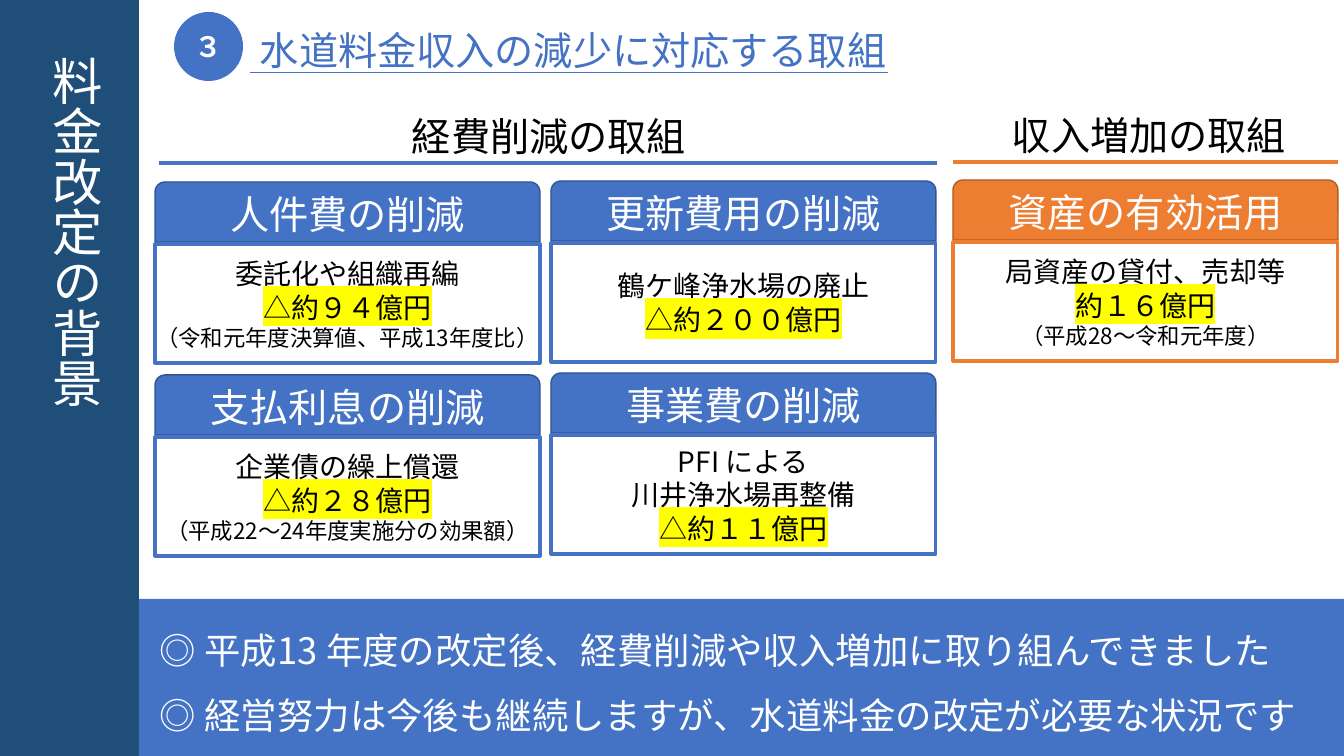
from pptx import Presentation
from pptx.dml.color import RGBColor
from pptx.enum import shapes, text
from pptx.oxml import ns
from pptx import util as u
from lxml import etree

NAVY = RGBColor(0x1F, 0x4E, 0x79)
BLUE = RGBColor(0x44, 0x72, 0xC4)
DARK_BLUE = RGBColor(0x32, 0x54, 0x91)
ORANGE = RGBColor(0xED, 0x7D, 0x31)
DARK_ORANGE = RGBColor(0xAF, 0x5C, 0x24)
WHITE = RGBColor(0xFF, 0xFF, 0xFF)
BLACK = RGBColor(0, 0, 0)
YELLOW = RGBColor(0xFF, 0xFF, 0x00)

PX = 914400 / 100.8
FONT = "Noto Sans CJK JP"
CENTER = text.PP_ALIGN.CENTER
MIDDLE = text.MSO_ANCHOR.MIDDLE
GROW = text.MSO_AUTO_SIZE.SHAPE_TO_FIT_TEXT
CARD_WIDTH, HEADER_HEIGHT, BODY_OFFSET, BODY_HEIGHT = 385, 60, 62, 119

CARDS = [
    (155, 182, BLUE, DARK_BLUE, "人件費の削減",
     ["委託化や組織再編"], "△約９４億円", "（令和元年度決算値、平成13年度比）"),
    (551, 181, BLUE, DARK_BLUE, "更新費用の削減",
     ["鶴ケ峰浄水場の廃止"], "△約２００億円", None),
    (155, 375, BLUE, DARK_BLUE, "支払利息の削減",
     ["企業債の繰上償還"], "△約２８億円", "（平成22～24年度実施分の効果額）"),
    (551, 373, BLUE, DARK_BLUE, "事業費の削減",
     ["PFI による", "川井浄水場再整備"], "△約１１億円", None),
    (953, 180, ORANGE, DARK_ORANGE, "資産の有効活用",
     ["局資産の貸付、売却等"], "約１６億円", "（平成28～令和元年度）"),
]
COLUMNS = [
    (383, 107, "経費削減の取組", 159, 937, 163, BLUE),
    (983, 106, "収入増加の取組", 953, 1338, 162, ORANGE),
]


def px(*lengths):
    """Turn whole pixels into EMU."""
    return [u.Emu(round(length * PX)) for length in lengths]


class Deck:
    """Holds the slide and draws styled elements on it."""

    def __init__(self):
        """Start a presentation with one blank slide."""
        self.presentation = Presentation()
        self.presentation.slide_width, self.presentation.slide_height = px(1344, 756)
        self.slide = self.presentation.slides.add_slide(self.presentation.slide_layouts[6])

    def shape(self, kind, box, fill, line=None, weight=1):
        """Add a filled preset shape."""
        shape = self.slide.shapes.add_shape(kind, *px(*box))
        shape.shadow.inherit = False
        shape.fill.solid()
        shape.fill.fore_color.rgb = fill
        if line is None:
            shape.line.fill.background()
        else:
            shape.line.color.rgb = line
            shape.line.width = u.Pt(weight)
        return shape

    def put_text(self, shape, lines, frame=None, paragraph=None):
        """Fill a shape with (text, size, colour, highlight, bold) lines."""
        text_frame = shape.text_frame
        for name, value in {"word_wrap": True, **(frame or {})}.items():
            setattr(text_frame, name, value)
        for index, line in enumerate(lines):
            item = text_frame.add_paragraph() if index else text_frame.paragraphs[0]
            for name, value in (paragraph or {}).items():
                setattr(item, name, value)
            self.run(item, *line)

    def run(self, paragraph, words, size, color, highlight=None, bold=False):
        """Add one styled run."""
        run = paragraph.add_run()
        run.text = words
        run.font.color.rgb = color
        properties = run._r.get_or_add_rPr()
        if highlight is not None:
            mark = etree.SubElement(properties, ns.qn("a:highlight"))
            etree.SubElement(mark, ns.qn("a:srgbClr")).set("val", str(highlight))
        for name, value in {"size": u.Pt(size), "bold": bold, "name": FONT}.items():
            setattr(run.font, name, value)
        etree.SubElement(properties, ns.qn("a:ea")).set("typeface", FONT)

    def textbox(self, box, lines, vertical=False, **paragraph):
        """Add a text box that grows with its text."""
        shape = self.slide.shapes.add_textbox(*px(*box))
        self.put_text(shape, lines, {"auto_size": GROW}, paragraph)
        if vertical:
            shape.element.txBody.find(ns.qn("a:bodyPr")).set("vert", "eaVert")

    def rule(self, left, right, top, color, weight):
        """Add a horizontal line."""
        line = self.slide.shapes.add_connector(
            shapes.MSO_CONNECTOR.STRAIGHT, *px(left, top, right, top))
        line.line.color.rgb = color
        line.line.width = u.Pt(weight)
        etree.SubElement(line.element.spPr, ns.qn("a:effectLst"))

    def card(self, left, top, color, edge, title, topics, amount, note):
        """Add a headed card with a highlighted amount."""
        margins = {"margin_left": 0, "margin_right": 0}
        centered = {"alignment": CENTER}
        header = self.shape(shapes.MSO_SHAPE.ROUND_2_SAME_RECTANGLE,
                            (left, top, CARD_WIDTH, HEADER_HEIGHT), color, edge)
        self.put_text(header, [(title, 28, WHITE)],
                      {**margins, "auto_size": GROW, "vertical_anchor": text.MSO_ANCHOR.TOP},
                      centered)
        body = self.shape(shapes.MSO_SHAPE.RECTANGLE,
                          (left, top + BODY_OFFSET, CARD_WIDTH, BODY_HEIGHT),
                          WHITE, color, 2.25)
        lines = [(topic, 20, BLACK) for topic in topics]
        lines.append((amount, 20, BLACK, YELLOW))
        if note:
            lines.append((note, 16, BLACK))
        self.put_text(body, lines, {**margins, "vertical_anchor": MIDDLE}, centered)


def main():
    """Build the slide and save it."""
    deck = Deck()
    deck.shape(shapes.MSO_SHAPE.RECTANGLE, (0, 0, 139, 756), NAVY)
    deck.textbox((29, 46, 82, 679), [("料金改定の背景", 36, WHITE)], vertical=True)
    deck.shape(shapes.MSO_SHAPE.RECTANGLE, (139, 599, 1205, 157), BLUE)
    deck.textbox((150, 601, 1203, 142), [
        ("◎ 平成13 年度の改定後、経費削減や収入増加に取り組んできました", 26, WHITE),
        ("◎ 経営努力は今後も継続しますが、水道料金の改定が必要な状況です", 26, WHITE),
    ], line_spacing=1.5)

    deck.textbox((250, 21, 669, 57), [("水道料金収入の減少に対応する取組", 28, BLUE)])
    badge = deck.shape(shapes.MSO_SHAPE.OVAL, (174, 12, 69, 69), BLUE)
    deck.put_text(badge, [("３", 20, WHITE, None, True)],
                  {"vertical_anchor": MIDDLE}, {"alignment": CENTER})
    deck.rule(250, 888, 72, BLUE, 0.5)

    for card in CARDS:
        deck.card(*card)
    for left, top, title, start, end, rule_top, color in COLUMNS:
        deck.textbox((left, top, 332, 57), [(title, 28, BLACK)], alignment=CENTER)
        deck.rule(start, end, rule_top, color, 2.25)
    deck.presentation.save("out.pptx")


if __name__ == "__main__":
    main()
